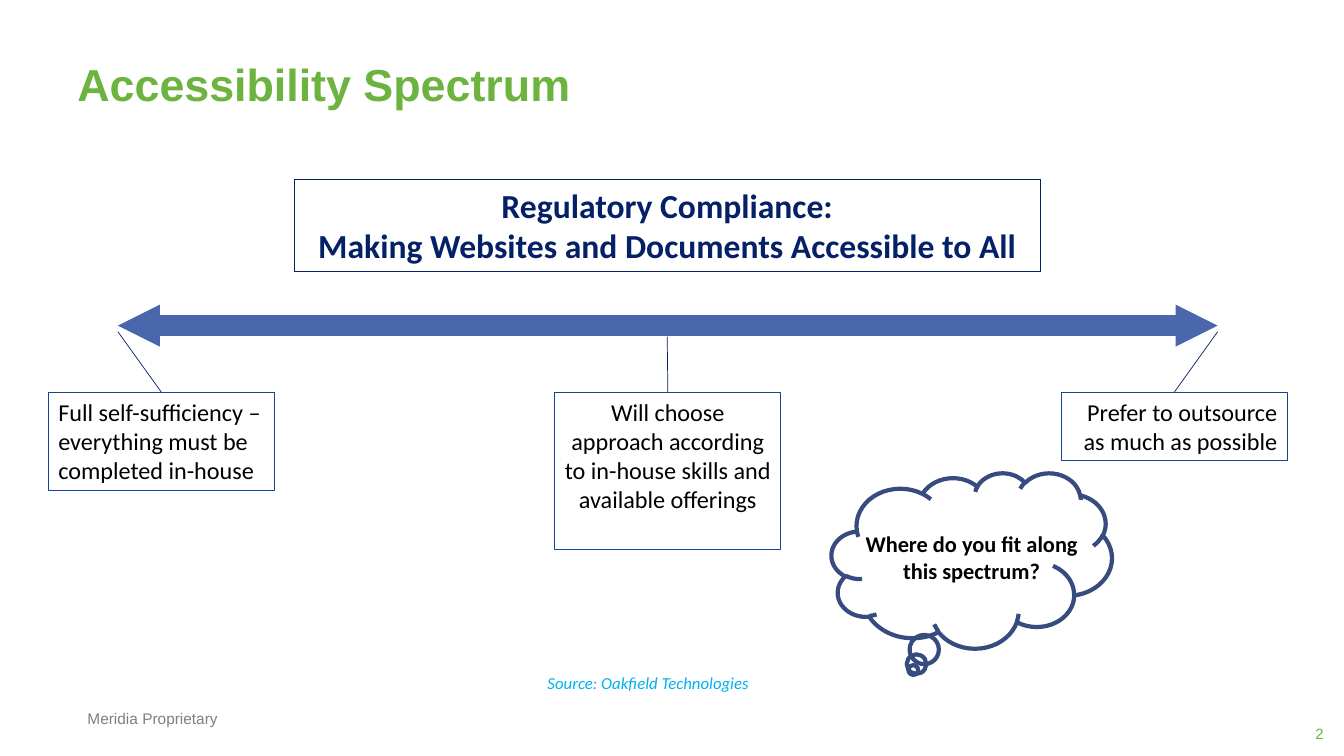
from lxml import etree
from pptx import Presentation
from pptx.dml.color import RGBColor
from pptx.enum.shapes import MSO_CONNECTOR, MSO_SHAPE
from pptx.enum.text import MSO_ANCHOR, PP_ALIGN
from pptx.oxml.ns import qn
from pptx.util import Pt

LEFT, CENTER, RIGHT = PP_ALIGN.LEFT, PP_ALIGN.CENTER, PP_ALIGN.RIGHT
TOP, MIDDLE, BOTTOM = MSO_ANCHOR.TOP, MSO_ANCHOR.MIDDLE, MSO_ANCHOR.BOTTOM

COLORS = {
    "green": "6DB33F",
    "navy": "042066",
    "arrow": "4A66AC",
    "box": "144592",
    "cloud": "374B7F",
    "source": "00B0F0",
    "gray": "808080",
    "black": "000000",
}

TITLE = "Accessibility Spectrum"
HEADING = ["Regulatory Compliance:",
           "Making Websites and Documents Accessible to All"]
# text, alignment, box height, start of the leader line (x, y)
STANCES = [
    ("Full self-sufficiency – everything must be completed in-house",
     LEFT, 70.6, (84.2, 236.9)),
    ("Will choose approach according to in-house skills and available offerings",
     CENTER, 112.3, (476.6, 240.5)),
    ("Prefer to outsource as much as possible",
     RIGHT, 49, (869.8, 236.9)),
]
QUESTION = "Where do you fit along this spectrum?"
SOURCE = "Source: Oakfield Technologies"
FOOTER = "Meridia Proprietary"
PAGE_NUMBER = "2"

ARROW_LEFT, ARROW_RIGHT, ARROW_Y = 84.2, 869.8, 232.6
STANCE_LEFT, STANCE_TOP, STANCE_WIDTH, STANCE_STEP = 34.6, 280.1, 161.3, 361.8


def color(name):
    return RGBColor.from_string(COLORS[name])


def write(box, lines, size, ink, font="Calibri", align=LEFT, anchor=TOP,
          bold=False, italic=False, wrap=True):
    frame = box.text_frame
    frame.word_wrap = wrap
    frame.vertical_anchor = anchor
    frame.text = "\n".join(lines)
    for para in frame.paragraphs:
        para.alignment = align
        para.font.name = font
        para.font.size = Pt(size)
        para.font.bold = bold
        para.font.italic = italic
        para.font.color.rgb = color(ink)


def add_text(page, area, lines, size, ink, **style):
    box = page.shapes.add_textbox(*map(Pt, area))
    write(box, lines, size, ink, **style)
    return box


def add_outline(page, kind, area, ink, width):
    shape = page.shapes.add_shape(kind, *map(Pt, area))
    shape.shadow.inherit = False
    shape.fill.background()
    shape.line.color.rgb = color(ink)
    shape.line.width = Pt(width)
    return shape


def add_line(page, start, end, ink, width, arrows=False):
    line = page.shapes.add_connector(
        MSO_CONNECTOR.STRAIGHT, *map(Pt, start + end))
    line.line.color.rgb = color(ink)
    line.line.width = Pt(width)
    if arrows:
        for tag in ("a:headEnd", "a:tailEnd"):
            etree.SubElement(line.line._get_or_add_ln(), qn(tag),
                             type="triangle", w="sm", len="sm")
    etree.SubElement(line._element.spPr, qn("a:effectLst"))


def add_spectrum(page):
    add_line(page, (ARROW_LEFT, ARROW_Y), (ARROW_RIGHT, ARROW_Y),
             "arrow", 15, arrows=True)
    for index, (text, align, height, start) in enumerate(STANCES):
        left = STANCE_LEFT + index * STANCE_STEP
        box = add_outline(page, MSO_SHAPE.RECTANGLE,
                          (left, STANCE_TOP, STANCE_WIDTH, height), "box", 0.75)
        write(box, [text], 17.3, "black", align=align)
        add_line(page, start, (left + STANCE_WIDTH / 2, STANCE_TOP), "navy", 0.5)


def main():
    deck = Presentation()
    deck.slide_width, deck.slide_height = Pt(960), Pt(540)
    page = deck.slides.add_slide(deck.slide_layouts[6])

    add_text(page, (55.4, 503.3, 113, 20.9), [FOOTER], 11, "gray",
             font="Arial", wrap=False)
    add_text(page, (48.2, 26.6, 872, 66.2), [TITLE], 32, "green",
             font="Arial", anchor=MIDDLE, bold=True)
    heading = add_outline(page, MSO_SHAPE.RECTANGLE,
                          (211.5, 128.9, 537, 65.5), "navy", 0.75)
    heading.left, heading.width = Pt(210.2), Pt(532.8)
    heading.top = Pt(128.2)
    heading_style = {"align": CENTER, "bold": True}
    write(heading, HEADING, 24, "navy", **heading_style)

    add_spectrum(page)

    add_outline(page, MSO_SHAPE.CLOUD_CALLOUT,
                (594, 337.7, 200.2, 125.3), "cloud", 3)
    add_text(page, (609.1, 375.1, 169.9, 46.1), [QUESTION], 16, "black",
             align=CENTER, bold=True)
    add_text(page, (301, 473, 324, 28.8), [SOURCE], 12, "source",
             align=CENTER, anchor=MIDDLE, italic=True)
    add_text(page, (752.4, 516.2, 200.2, 18), [PAGE_NUMBER], 10.7, "green",
             font="Arial", align=RIGHT, anchor=BOTTOM)

    deck.save("out.pptx")


if __name__ == "__main__":
    main()
